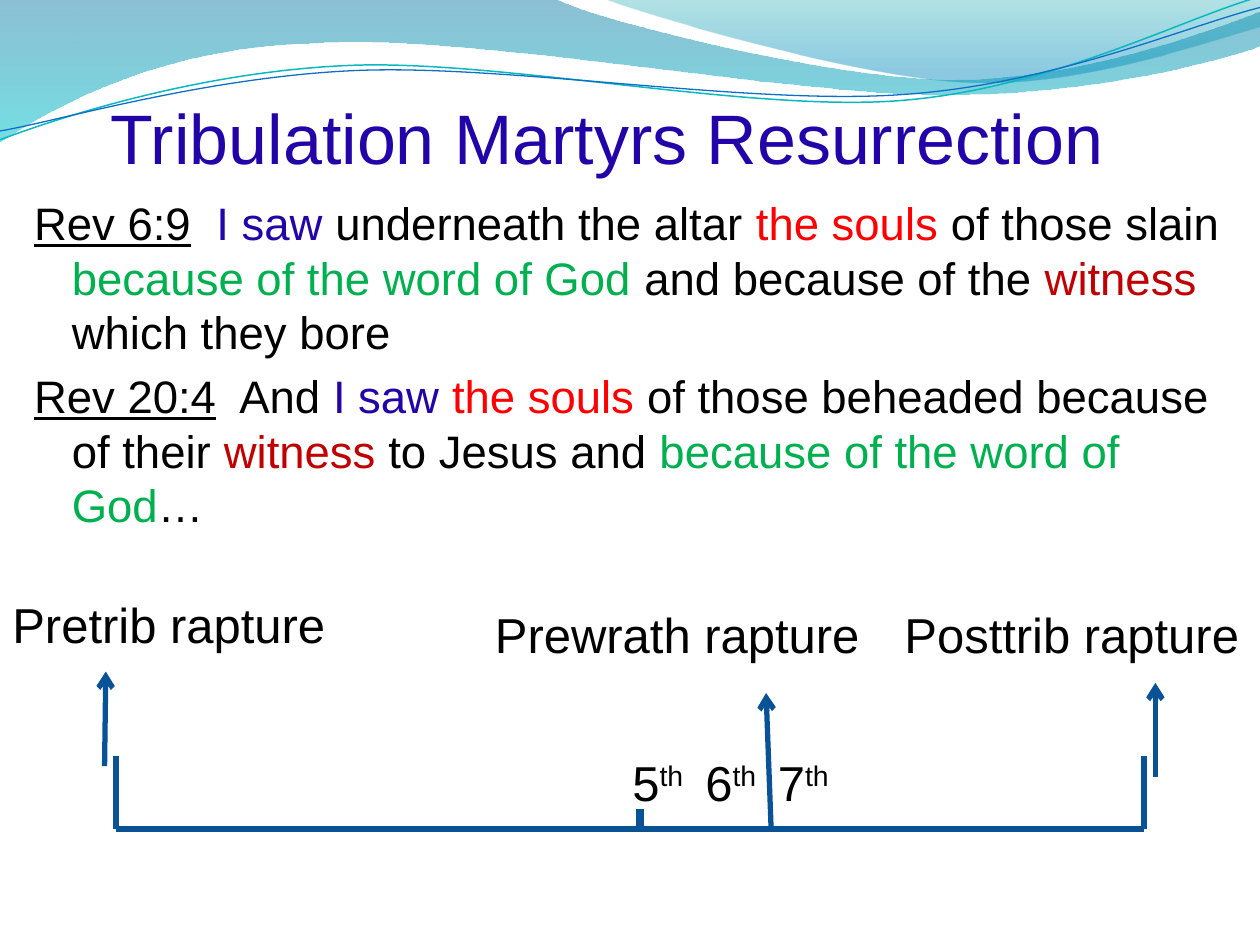
import math
import pptx
import pptx.util
import pptx.dml.color
import pptx.enum.shapes
import pptx.enum.text
import pptx.oxml.ns
import lxml.etree

Inches = pptx.util.Inches
Pt = pptx.util.Pt
RGB = pptx.dml.color.RGBColor
qn = pptx.oxml.ns.qn

BLACK = RGB(0x00, 0x00, 0x00)
INDIGO = RGB(0x23, 0x04, 0xA8)
RED = RGB(0xFF, 0x00, 0x00)
GREEN = RGB(0x00, 0xB0, 0x50)
CRIMSON = RGB(0xC0, 0x00, 0x00)
NAVY = RGB(0x09, 0x52, 0x95)
TEAL = RGB(0x0A, 0xB8, 0xBF)
BLUE = RGB(0x0F, 0x6F, 0xC6)
DEEP = RGB(0x00, 0x74, 0xA1)
CYAN = RGB(0x00, 0xC6, 0xCF)
SEA = RGB(0x00, 0xA1, 0xA9)
SKY = RGB(0x00, 0x8B, 0xBF)

# Wave paths: two numbers are a line to a point, six are a Bezier curve.
BROAD = [(0, 0), (4.4, -0.01), (4.76, 0.17, 6.64, 0.63, 7.58, 0.63),
         (8.53, 0.63, 9.58, 0.26, 10, 0.09), (10.01, 0.36),
         (9.83, 0.44, 8.7, 0.76, 7.46, 0.75),
         (6.22, 0.75, 3.82, 0.28, 2.57, 0.34),
         (1.29, 0.36, 0.46, 0.83, -0.01, 1.13), (0, 0)]
CREST = [(4.79, -0.01), (5.09, 0.11, 6.82, 0.62, 7.69, 0.65),
         (8.56, 0.69, 9.61, 0.32, 10, 0.21), (10, 0), (4.79, -0.01)]
UPPER = [(0, 1.11), (0.48, 0.93, 1.58, 0.57, 2.77, 0.52),
         (3.95, 0.47, 5.93, 0.89, 7.13, 0.8),
         (8.33, 0.71, 9.38, 0.15, 9.98, -0.02)]
LOWER = [(0, 1.04), (0.47, 0.96, 1.64, 0.61, 2.83, 0.56),
         (4.03, 0.51, 5.97, 0.84, 7.17, 0.75),
         (8.36, 0.67, 9.41, 0.21, 10, 0.06)]
TILT = 2.7

VERSES = [
    [("Rev 6:9", BLACK, {"u": "sng"}), (" ", BLACK, {"spc": "720"}),
     ("I saw ", INDIGO, {}), ("underneath the altar ", BLACK, {}),
     ("the souls ", RED, {}), ("of those slain ", BLACK, {}),
     ("because of the word of God ", GREEN, {}),
     ("and because of the ", BLACK, {}), ("witness ", CRIMSON, {}),
     ("which they bore", BLACK, {})],
    [("Rev 20:4", BLACK, {"u": "sng"}), (" ", BLACK, {"spc": "580"}),
     ("And ", BLACK, {}), ("I saw ", INDIGO, {}), ("the souls ", RED, {}),
     ("of those beheaded because of their ", BLACK, {}),
     ("witness", CRIMSON, {}), (" to Jesus and ", BLACK, {}),
     ("because of the word of God", GREEN, {}), ("…", BLACK, {})],
]
RAISED = ("th", BLACK, {"baseline": "30000"})


def place(shape, box):
    shape.left, shape.top, shape.width, shape.height = map(Inches, box)


def write(par, parts, size):
    """Add runs given as text, colour and extra run attributes."""
    for text, color, attrs in parts:
        run = par.add_run()
        run.text = text
        run.font.name = "Arial"
        run.font.size = Pt(size)
        run.font.color.rgb = color
        for key, value in attrs.items():
            run.font._element.set(key, value)


def turn(point, angle, hub=(5, 0.58)):
    """Rotate a point clockwise about the hub."""
    dx, dy = point[0] - hub[0], point[1] - hub[1]
    cos, sin = math.cos(math.radians(angle)), math.sin(math.radians(angle))
    return hub[0] + dx * cos - dy * sin, hub[1] + dx * sin + dy * cos


def bend(shape, path):
    """Join the corner points of each six-number part into one curve."""
    legs = iter(list(shape._element.spPr.iter(qn("a:lnTo"))))
    for part in path[1:]:
        leg = next(legs)
        if len(part) == 6:
            curve = lxml.etree.Element(qn("a:cubicBezTo"))
            leg.addprevious(curve)
            for knot in (leg, next(legs), next(legs)):
                curve.append(knot[0])
                knot.getparent().remove(knot)


def add_wave(slide, path, left, top, tilt=0):
    spots = [part[i:i + 2] for part in path for i in range(0, len(part), 2)]
    points = [(Inches(left + x), Inches(top + y))
              for x, y in (turn(spot, tilt) for spot in spots)]
    pen = slide.shapes.build_freeform(*points[0])
    pen.add_line_segments(points[1:], close=not tilt)
    wave = pen.convert_to_shape()
    bend(wave, path)
    wave.rotation = -tilt
    wave.shadow.inherit = False
    return wave


def shade(shape, stops):
    """Fill from top to bottom with see-through colours."""
    shape.line.fill.background()
    shape.fill.gradient()
    shape.fill.gradient_angle = 270
    for stop, (spot, color, _) in zip(shape.fill.gradient_stops, stops):
        stop.position = spot
        stop.color.rgb = color
    marks = shape._element.spPr.iter(qn("a:srgbClr"))
    for mark, (_, _, alpha) in zip(marks, stops):
        lxml.etree.SubElement(mark, qn("a:alpha")).set("val", str(alpha * 1000))


def add_banner(slide, left, top):
    for path, stops in ((BROAD, [(0, DEEP, 45), (1, CYAN, 55)]),
                        (CREST, [(0, SEA, 30), (0.8, SKY, 45)])):
        shade(add_wave(slide, path, left, top), stops)
    for path, color, width in ((UPPER, TEAL, 0.85), (LOWER, BLUE, 0.75)):
        wave = add_wave(slide, path, left, top, TILT)
        wave.fill.background()
        wave.line.color.rgb = color
        wave.line.width = Pt(width)


def fill_title(title, box):
    place(title, box)
    frame = title.text_frame
    frame.auto_size = pptx.enum.text.MSO_AUTO_SIZE.NONE
    frame.vertical_anchor = pptx.enum.text.MSO_ANCHOR.BOTTOM
    frame.margin_left = Inches(0.3)
    frame.margin_right = frame.margin_bottom = 0
    par = frame.paragraphs[0]
    par.alignment = pptx.enum.text.PP_ALIGN.LEFT
    write(par, [("Tribulation Martyrs Resurrection", INDIGO, {})], 40)


def fill_body(body, box):
    place(body, box)
    frame = body.text_frame
    frame.auto_size = pptx.enum.text.MSO_AUTO_SIZE.NONE
    for index, verse in enumerate(VERSES):
        par = frame.add_paragraph() if index else frame.paragraphs[0]
        par.space_before = Pt(5.2)
        props = par._p.get_or_add_pPr()
        props.set("marL", str(Inches(0.3)))
        props.set("indent", str(Inches(-0.3)))
        lxml.etree.SubElement(props, qn("a:buNone"))
        write(par, verse, 26)


def add_label(slide, box, parts):
    label = slide.shapes.add_textbox(*map(Inches, box))
    frame = label.text_frame
    frame.word_wrap = True
    frame.auto_size = pptx.enum.text.MSO_AUTO_SIZE.SHAPE_TO_FIT_TEXT
    write(frame.paragraphs[0], parts, 28)


def add_line(slide, ends, width=3, arrow=False):
    line = slide.shapes.add_connector(
        pptx.enum.shapes.MSO_CONNECTOR.STRAIGHT, *map(Inches, ends))
    line.line.color.rgb = NAVY
    line.line.width = Pt(width)
    if arrow:
        tip = lxml.etree.SubElement(line.line._get_or_add_ln(), qn("a:tailEnd"))
        tip.set("type", "arrow")
    lxml.etree.SubElement(line._element.spPr, qn("a:effectLst"))


def add_seals(slide, left, top):
    """Draw the timeline with its three rapture views."""
    start, end, base = left + 0.92, left + 9.08, top + 1.91
    add_line(slide, (start, base, end, base))
    for x in (start, end):
        add_line(slide, (x, base, x, base - 0.58))
    add_line(slide, (left + 5.08, base - 0.16, left + 5.08, base), 4.5)
    for x, y, tip, rise in ((0.83, 1.41, 0.84, 0.75), (6.12, 1.9, 6.08, 1.07),
                            (9.17, 1.5, 9.17, 0.75)):
        add_line(slide, (left + x, top + y, left + tip, top + y - rise),
                 arrow=True)
    sixth = [("6", BLACK, {}), RAISED, (" ", BLACK, {"spc": "450"}),
             ("7", BLACK, {}), RAISED]
    for parts, x, y, width in (
            ([("Pretrib rapture", BLACK, {})], 0, 0, 2.92),
            ([("Prewrath rapture", BLACK, {})], 3.83, 0.08, 3.17),
            ([("Posttrib rapture", BLACK, {})], 7.08, 0.08, 3.08),
            ([("5", BLACK, {}), RAISED], 4.92, 1.25, 0.75),
            (sixth, 5.5, 1.25, 1.42)):
        add_label(slide, (left + x, top + y, width, 0.57), parts)


def main():
    deck = pptx.Presentation()
    deck.slide_width, deck.slide_height = Inches(10), Inches(7.5)
    slide = deck.slides.add_slide(deck.slide_layouts[1])
    title, body = slide.placeholders
    add_banner(slide, 0, 0)
    for holder in (title, body):
        slide.shapes._spTree.append(holder._element)
    fill_title(title, (0.58, 0.17, 9, 1.25))
    fill_body(body, (0.17, 1.5, 9.67, 5.83))
    add_seals(slide, 0, 4.67)
    deck.save("out.pptx")


if __name__ == "__main__":
    main()
